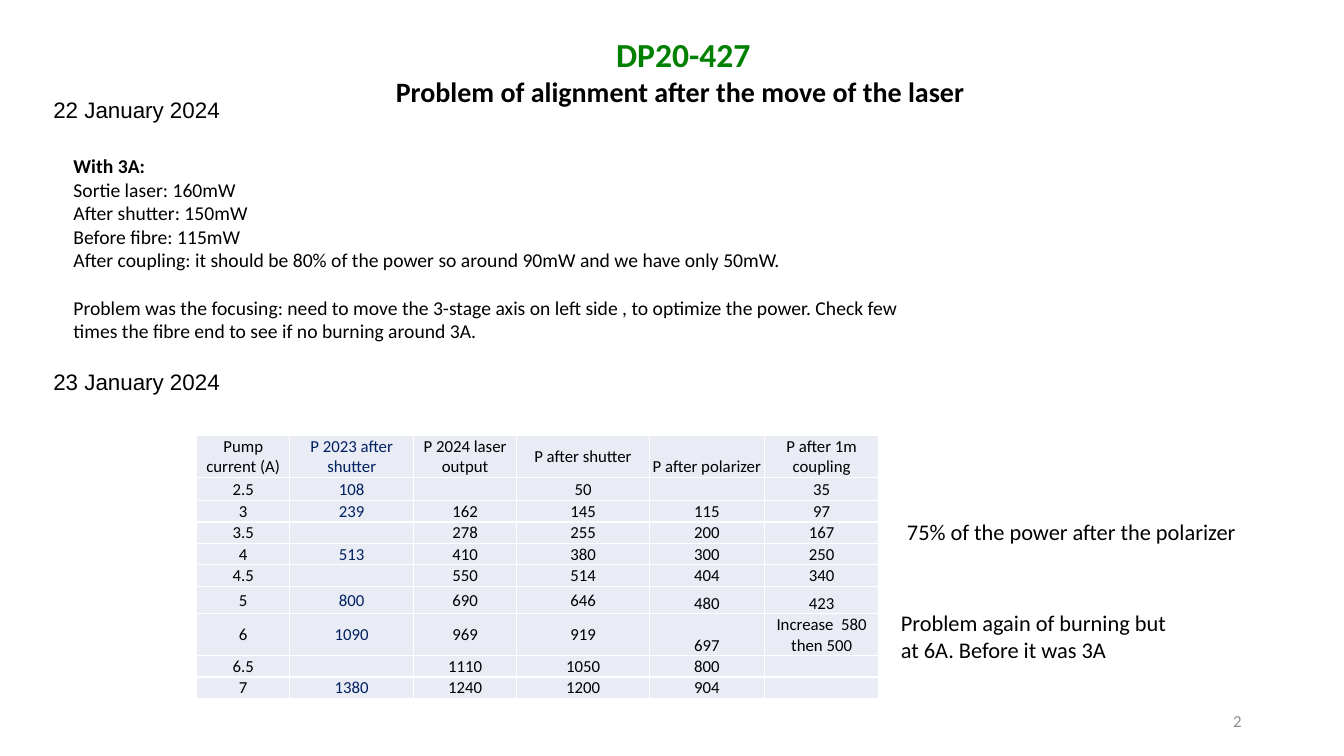
from lxml import etree
from pptx import Presentation
from pptx.dml.color import RGBColor
from pptx.enum import text
from pptx.oxml import ns
from pptx.util import Pt

COLORS = {
    "black": "000000",
    "green": "008000",
    "navy": "002060",
    "gray": "8C8C8C",
    "cell": "E9EBF5",
    "border": "FFFFFF",
}
CENTER = text.PP_ALIGN.CENTER
MIDDLE, BOTTOM = text.MSO_ANCHOR.MIDDLE, text.MSO_ANCHOR.BOTTOM

HEADINGS = ["Pump current (A)", "P 2023 after shutter", "P 2024 laser output",
            "P after shutter", "P after polarizer", "P after 1m coupling"]
READINGS = [
    ["2.5", "108", "", "50", "", "35"],
    ["3", "239", "162", "145", "115", "97"],
    ["3.5", "", "278", "255", "200", "167"],
    ["4", "513", "410", "380", "300", "250"],
    ["4.5", "", "550", "514", "404", "340"],
    ["5", "800", "690", "646", "480", "423"],
    ["6", "1090", "969", "919", "697", "Increase  580 then 500"],
    ["6.5", "", "1110", "1050", "800", ""],
    ["7", "1380", "1240", "1200", "904", ""],
]
COLUMN_WIDTHS = [66.5, 88.5, 73.5, 95, 82, 82]
ROW_HEIGHTS = [30, 16.5, 15.2, 15.2, 15.2, 15.2, 19.5, 29.5, 15.2, 15.2]
MEASUREMENTS = ["Sortie laser: 160mW", "After shutter: 150mW", "Before fibre: 115mW",
                "After coupling: it should be 80% of the power so around 90mW "
                "and we have only 50mW."]
FOCUSING = ("Problem was the focusing: need to move the 3-stage axis on left side , "
            "to optimize the power. Check few times the fibre end to see if no "
            "burning around 3A.")


def apply(target, values):
    for name, value in values.items():
        setattr(target, name, value)


def write(paragraph, words, size, color="black", bold=False, face="Calibri", **layout):
    apply(paragraph, layout)
    run = paragraph.add_run()
    run.text = words
    apply(run.font, {"name": face, "size": Pt(size), "bold": bold})
    run.font.color.rgb = RGBColor.from_string(COLORS[color])


def next_paragraph(frame, index):
    return frame.add_paragraph() if index else frame.paragraphs[0]


def add_heading(slide, left, top, width, height):
    heading = slide.shapes.title
    apply(heading, {"left": Pt(left), "top": Pt(top),
                    "width": Pt(width), "height": Pt(height)})
    frame = heading.text_frame
    apply(frame, {"word_wrap": False, "vertical_anchor": text.MSO_ANCHOR.TOP,
                  "auto_size": text.MSO_AUTO_SIZE.NONE})
    lines = [("DP20-427", 24, "green"),
             ("Problem of alignment after the move of the laser ", 20, "black")]
    for index, (words, size, color) in enumerate(lines):
        write(next_paragraph(frame, index), words, size, color, True, alignment=CENTER)


def add_note(slide, box, words, size=16, anchor=text.MSO_ANCHOR.TOP, **style):
    frame = slide.shapes.add_textbox(*map(Pt, box)).text_frame
    apply(frame, {"word_wrap": True, "vertical_anchor": anchor})
    write(frame.paragraphs[0], words, size, **style)
    return frame


def add_observations(slide, box):
    frame = add_note(slide, box, "With 3A:", 14, bold=True)
    for measurement in MEASUREMENTS:
        write(frame.add_paragraph(), measurement, 14)
    write(frame.add_paragraph(), FOCUSING, 14, space_before=Pt(17))


def add_borders(cell):
    properties = cell._tc.get_or_add_tcPr()
    for side in ("a:lnL", "a:lnR", "a:lnT", "a:lnB"):
        line = etree.SubElement(properties, ns.qn(side), w=str(Pt(1)))
        fill = etree.SubElement(line, ns.qn("a:solidFill"))
        etree.SubElement(fill, ns.qn("a:srgbClr"), val=COLORS["border"])


def fill_cell(cell, words, column):
    apply(cell, {"margin_left": Pt(0.7), "margin_right": Pt(0.7),
                 "margin_top": Pt(0.7), "margin_bottom": 0,
                 "vertical_anchor": BOTTOM if column >= 4 else MIDDLE})
    add_borders(cell)
    cell.fill.solid()
    cell.fill.fore_color.rgb = RGBColor.from_string(COLORS["cell"])
    paragraph = cell.text_frame.paragraphs[0]
    if words:
        write(paragraph, words, 12, "navy" if column == 1 else "black", alignment=CENTER)
    else:
        etree.SubElement(paragraph._p, ns.qn("a:endParaRPr"), sz="1200")


def add_power_table(slide, left, top):
    rows = [HEADINGS] + READINGS
    table = slide.shapes.add_table(
        len(rows), len(HEADINGS), Pt(left), Pt(top),
        Pt(sum(COLUMN_WIDTHS)), Pt(sum(ROW_HEIGHTS))).table
    apply(table, {"first_row": False, "horz_banding": False})
    for column, width in zip(table.columns, COLUMN_WIDTHS):
        column.width = Pt(width)
    for row, height in zip(table.rows, ROW_HEIGHTS):
        row.height = Pt(height)
    for row_index, row in enumerate(rows):
        for column_index, words in enumerate(row):
            fill_cell(table.cell(row_index, column_index), words, column_index)


def add_alignment_slide(deck):
    slide = deck.slides.add_slide(deck.slide_layouts[5])
    add_heading(slide, 273.6, 20.9, 429, 60.5)
    add_power_table(slide, 140.5, 311)
    add_observations(slide, (45.4, 106.6, 629.3, 143.3))
    for date, top in (("22 January 2024", 64.8), ("23 January 2024", 259.5)):
        add_note(slide, (31, top, 197.3, 26.6), date, face="Arial")
    add_note(slide, (636.5, 431.3, 211.7, 46),
             "Problem again of burning but at 6A. Before it was 3A")
    add_note(slide, (640.8, 366.5, 263.5, 26.6), "75% of the power after the polarizer")
    add_note(slide, (678, 500.5, 216, 28.8), "2", 12, MIDDLE,
             color="gray", alignment=text.PP_ALIGN.RIGHT)


def main():
    deck = Presentation()
    apply(deck, {"slide_width": Pt(960), "slide_height": Pt(540)})
    add_alignment_slide(deck)
    deck.save("out.pptx")


if __name__ == "__main__":
    main()
